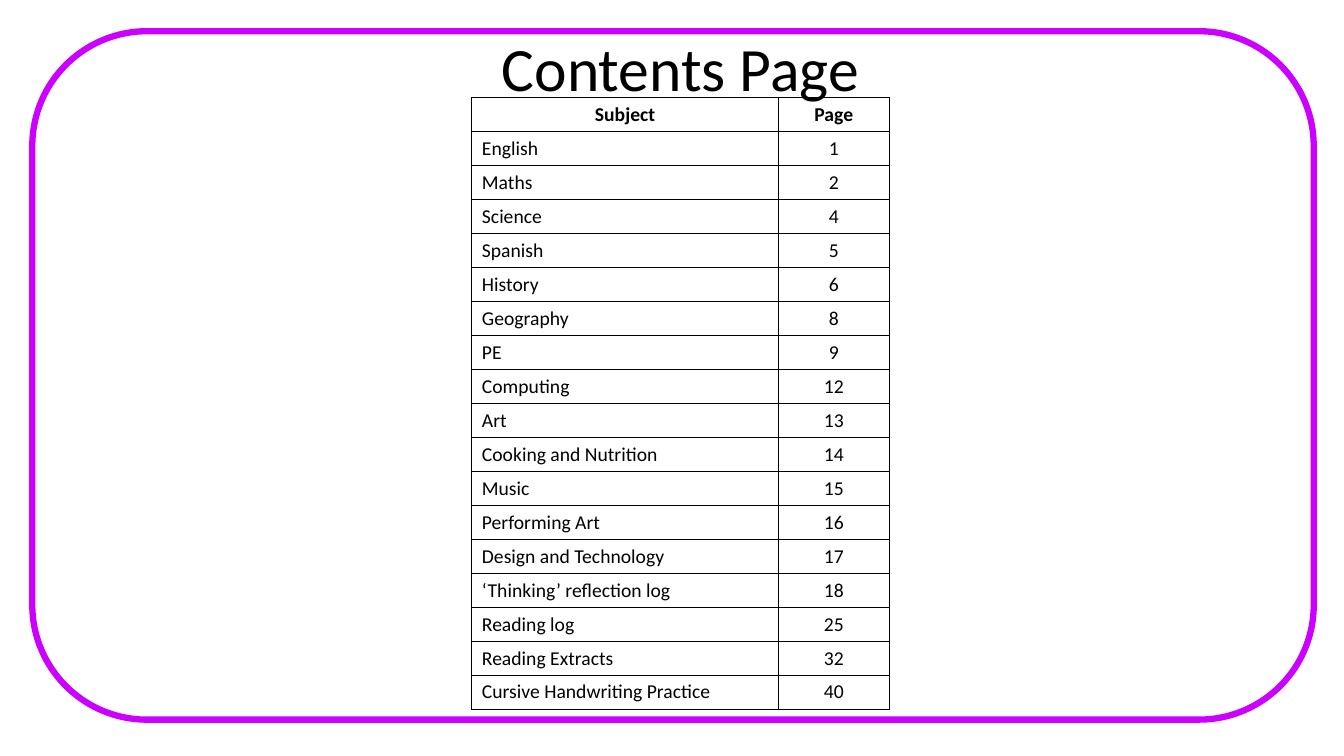
from lxml import etree
from pptx import Presentation
from pptx import util as u
from pptx.dml.color import RGBColor
from pptx.enum import shapes, text
from pptx.oxml import ns

BLACK = RGBColor(0x00, 0x00, 0x00)
WHITE = RGBColor(0xFF, 0xFF, 0xFF)
PURPLE = RGBColor(0xCC, 0x00, 0xFF)
FONT = "Calibri"
CENTER = text.PP_ALIGN.CENTER
LEFT = text.PP_ALIGN.LEFT
FIRST_FILLED_ROW = 14
ENTRIES = [
    ("Subject", "Page"),
    ("English", "1"),
    ("Maths", "2"),
    ("Science", "4"),
    ("Spanish", "5"),
    ("History", "6"),
    ("Geography", "8"),
    ("PE", "9"),
    ("Computing", "12"),
    ("Art", "13"),
    ("Cooking and Nutrition", "14"),
    ("Music", "15"),
    ("Performing Art", "16"),
    ("Design and Technology", "17"),
    ("‘Thinking’ reflection log", "18"),
    ("Reading log", "25"),
    ("Reading Extracts", "32"),
    ("Cursive Handwriting Practice", "40"),
]


def add_span(para, words, size, align, bold=False):
    """Add one formatted run to an aligned paragraph."""
    para.alignment = align
    span = para.add_run()
    span.text = words
    span.font.name = FONT
    span.font.size = u.Pt(size)
    span.font.bold = bold
    span.font.color.rgb = BLACK


def set_title(page, words):
    """Place and fill the title placeholder."""
    title = page.shapes.title
    title.left, title.top = u.Inches(1), u.Inches(0.14)
    title.width, title.height = u.Inches(11.5), u.Inches(1.14)
    title.text_frame.word_wrap = True
    title.text_frame.vertical_anchor = text.MSO_ANCHOR.MIDDLE
    para = title.text_frame.paragraphs[0]
    para.line_spacing = 0.9
    add_span(para, words, 44, CENTER)


def set_borders(cell):
    """Draw a one-point black line on each side of a cell."""
    properties = cell._tc.get_or_add_tcPr()
    for index, side in enumerate(("lnL", "lnR", "lnT", "lnB")):
        line = etree.Element(ns.qn(f"a:{side}"), w=str(u.Pt(1)))
        fill = etree.SubElement(line, ns.qn("a:solidFill"))
        etree.SubElement(fill, ns.qn("a:srgbClr"), val=str(BLACK))
        properties.insert(index, line)


def fill_cell(cell, words, align, is_header, is_filled):
    """Write and format one table cell."""
    if is_filled:
        cell.fill.solid()
        cell.fill.fore_color.rgb = WHITE
    else:
        cell.fill.background()
    set_borders(cell)
    add_span(cell.text_frame.paragraphs[0], words, 14, align, is_header)


def add_contents_table(page):
    """Add the table of subjects and page numbers."""
    frame = page.shapes.add_table(
        len(ENTRIES), 2, u.Inches(4.68), u.Inches(0.97),
        u.Inches(4.14), u.Inches(0.31 * len(ENTRIES)))
    table = frame.table
    table.first_row = False
    table.horz_banding = False
    for column, width in zip(table.columns, (3.04, 1.1)):
        column.width = u.Inches(width)
    for row, entry in enumerate(ENTRIES):
        table.rows[row].height = u.Inches(0.31)
        for column, words in enumerate(entry):
            align = CENTER if row == 0 or column == 1 else LEFT
            fill_cell(table.cell(row, column), words, align,
                      row == 0, row >= FIRST_FILLED_ROW)


def add_frame(page):
    """Add the rounded outline around the page."""
    box = page.shapes.add_shape(
        shapes.MSO_SHAPE.ROUNDED_RECTANGLE,
        u.Inches(0.32), u.Inches(0.31), u.Inches(12.71), u.Inches(6.83))
    box.shadow.inherit = False
    box.fill.background()
    box.line.color.rgb = PURPLE
    box.line.width = u.Pt(4.5)


def main():
    """Build and save the contents slide."""
    deck = Presentation()
    deck.slide_width, deck.slide_height = u.Inches(13.33), u.Inches(7.5)
    page = deck.slides.add_slide(deck.slide_layouts.get_by_name("Title Only"))
    page.background.fill.solid()
    page.background.fill.fore_color.rgb = WHITE
    set_title(page, "Contents Page")
    add_contents_table(page)
    add_frame(page)
    deck.save("out.pptx")


if __name__ == "__main__":
    main()
